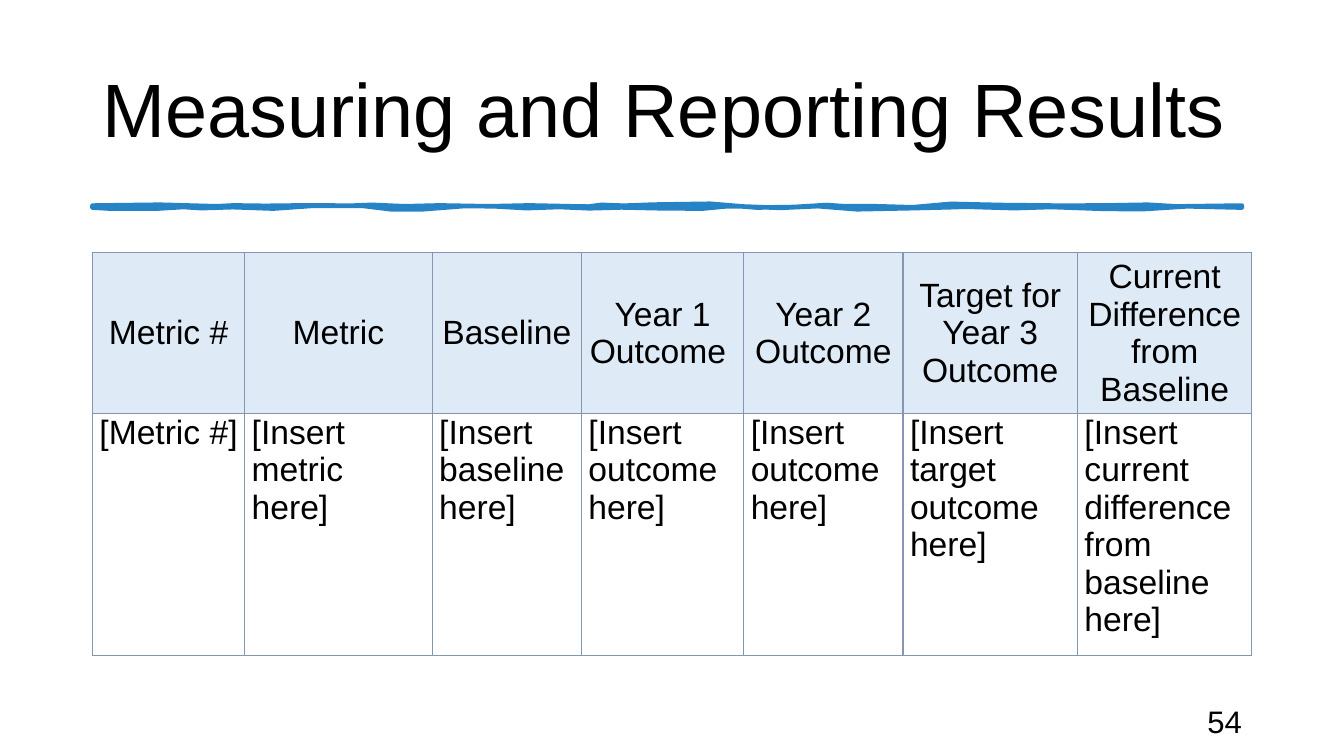
import dataclasses

import pptx
import pptx.dml.color
import pptx.enum.text
import pptx.oxml
import pptx.oxml.ns
import pptx.util

ALIGN = pptx.enum.text.PP_ALIGN
ANCHOR = pptx.enum.text.MSO_ANCHOR


@dataclasses.dataclass(frozen=True)
class Theme:
    font: str = "Arial"
    text: str = "000000"
    accent: str = "2683C6"
    header_fill: str = "DEEAF6"
    border: str = "8496B0"
    title_size: float = 54
    table_size: float = 24
    number_size: float = 22.2
    rule_width: float = 3.25
    border_width: float = 1


THEME = Theme()
SLIDE_WIDTH = pptx.util.Inches(13.33)
SLIDE_HEIGHT = pptx.util.Inches(7.5)


def across(percent):
    return round(SLIDE_WIDTH * percent / 100)


def down(percent):
    return round(SLIDE_HEIGHT * percent / 100)


# Content grid: 1150 fine units between the side margins
LEFT = across(6.88)
CONTENT_WIDTH = across(86.27)
UNIT = CONTENT_WIDTH / 1150

# Column widths in grid units, header text, body text
COLUMNS = [
    (151, "Metric #", "[Metric #]"),
    (186, "Metric", "[Insert metric here]"),
    (148, "Baseline", "[Insert baseline here]"),
    (161, "Year 1 Outcome ", "[Insert outcome here]"),
    (158, "Year 2 Outcome ", "[Insert outcome here]"),
    (173, "Target for Year 3 Outcome", "[Insert target outcome here]"),
    (173, "Current Difference from Baseline",
     "[Insert current difference from baseline here]"),
]
ROW_HEIGHTS = [19.87, 29.78]

# Waves of the brush rule in grid units: two control points, then the end x
TOP_WAVES = [
    (27, 0, 52, -2, 98), (145, 2, 128, -1, 152), (175, 1, 211, -1, 239),
    (268, 1, 267, -2, 292), (318, 2, 331, -1, 368), (406, 2, 422, -1, 456),
    (489, 1, 489, 2, 497), (506, -2, 523, 1, 539), (555, -1, 609, -4, 638),
    (667, 4, 689, 2, 714), (739, -2, 735, 2, 756), (776, 0, 809, 4, 832),
    (855, -4, 890, 0, 931), (971, 0, 971, 0, 995), (1020, 0, 1044, -2, 1060),
    (1076, 2, 1111, 0, 1140),
]
BOTTOM_WAVES = [
    (1113, 0, 1097, -3, 1064), (1030, 3, 1018, 2, 976), (935, -2, 931, 2, 889),
    (847, -2, 860, 0, 836), (812, 0, 759, 4, 737), (714, -4, 690, 2, 661),
    (632, -2, 633, -2, 619), (606, 2, 569, 1, 543), (517, -1, 498, 2, 478),
    (459, -2, 436, 2, 414), (391, -2, 381, -3, 349), (317, 3, 298, 3, 285),
    (271, -3, 218, -3, 197), (176, 3, 143, -2, 121), (100, 2, 97, -2, 79),
    (62, 2, 22, 2, 0),
]
RULE_THICKNESS = 2
CURVE_STOPS = (0.25, 0.75)


def rgb(value):
    return pptx.dml.color.RGBColor.from_string(value)


def format_paragraph(paragraph, size, alignment):
    paragraph.alignment = alignment
    for run in paragraph.runs:
        run.font.name = THEME.font
        run.font.size = pptx.util.Pt(size)
        run.font.color.rgb = rgb(THEME.text)


def add_text(slide, text, box, size, alignment):
    frame = slide.shapes.add_textbox(*box).text_frame
    frame.word_wrap = True
    frame.vertical_anchor = ANCHOR.MIDDLE
    frame.text = text
    paragraph = frame.paragraphs[0]
    format_paragraph(paragraph, size, alignment)
    return paragraph


def wave_edge(start, base, waves):
    """Crest and trough of each wave, between the two ends of the edge."""
    points = [(start, base)]
    for x1, rise1, x2, rise2, end in waves:
        for t in CURVE_STOPS:
            u = 1 - t
            x = u**3 * start + 3 * u * u * t * x1 + 3 * u * t * t * x2 + t**3 * end
            y = base + 3 * u * u * t * rise1 + 3 * u * t * t * rise2
            points.append((x, y))
        start = end
    return points + [(start, base)]


def add_brush_rule(slide, top):
    right = TOP_WAVES[-1][-1]
    outline = (wave_edge(0, 0, TOP_WAVES)
               + wave_edge(right, RULE_THICKNESS, BOTTOM_WAVES))
    points = [(round(LEFT + x * UNIT), round(top + y * UNIT)) for x, y in outline]
    builder = slide.shapes.build_freeform(*points[0])
    builder.add_line_segments(points[1:], close=True)
    rule = builder.convert_to_shape()
    rule.shadow.inherit = False
    rule.fill.solid()
    rule.fill.fore_color.rgb = rgb(THEME.accent)
    rule.line.color.rgb = rgb(THEME.accent)
    rule.line.width = pptx.util.Pt(THEME.rule_width)


def add_borders(cell):
    properties = cell._tc.get_or_add_tcPr()
    width = pptx.util.Pt(THEME.border_width)
    for position, side in enumerate(("lnL", "lnR", "lnT", "lnB")):
        properties.insert(position, pptx.oxml.parse_xml(
            f'<a:{side} {pptx.oxml.ns.nsdecls("a")} w="{width}"><a:solidFill>'
            f'<a:srgbClr val="{THEME.border}"/></a:solidFill></a:{side}>'))


def fill_cell(cell, text, is_header):
    cell.margin_left = cell.margin_right = pptx.util.Inches(0.07)
    cell.margin_top = cell.margin_bottom = 0
    cell.vertical_anchor = ANCHOR.MIDDLE if is_header else ANCHOR.TOP
    if is_header:
        cell.fill.solid()
        cell.fill.fore_color.rgb = rgb(THEME.header_fill)
    else:
        cell.fill.background()
    cell.text_frame.text = text
    format_paragraph(cell.text_frame.paragraphs[0], THEME.table_size,
                     ALIGN.CENTER if is_header else ALIGN.LEFT)
    add_borders(cell)


def add_metric_table(slide, top):
    heights = [down(height) for height in ROW_HEIGHTS]
    table = slide.shapes.add_table(len(heights), len(COLUMNS), LEFT, top,
                                   CONTENT_WIDTH, sum(heights)).table
    table.first_row = False
    table.horz_banding = False
    for row, height in zip(table.rows, heights):
        row.height = height
    for index, (units, *texts) in enumerate(COLUMNS):
        table.columns[index].width = round(units * UNIT)
        for row, text in enumerate(texts):
            fill_cell(table.cell(row, index), text, is_header=row == 0)


def main():
    presentation = pptx.Presentation()
    presentation.slide_width = SLIDE_WIDTH
    presentation.slide_height = SLIDE_HEIGHT
    slide = presentation.slides.add_slide(presentation.slide_layouts[6])

    # Title and brush rule
    title = add_text(slide, "Measuring and Reporting Results",
                     (LEFT, down(5.33), CONTENT_WIDTH, down(19.33)),
                     THEME.title_size, ALIGN.LEFT)
    title.line_spacing = 0.9
    add_brush_rule(slide, down(27.2))

    # Metrics
    add_metric_table(slide, down(33.4))

    # Slide number, flush with the right margin
    number_width = across(22.5)
    add_text(slide, "54",
             (LEFT + CONTENT_WIDTH - number_width, down(92.67),
              number_width, down(5.33)),
             THEME.number_size, ALIGN.RIGHT)

    presentation.save("out.pptx")


if __name__ == "__main__":
    main()
